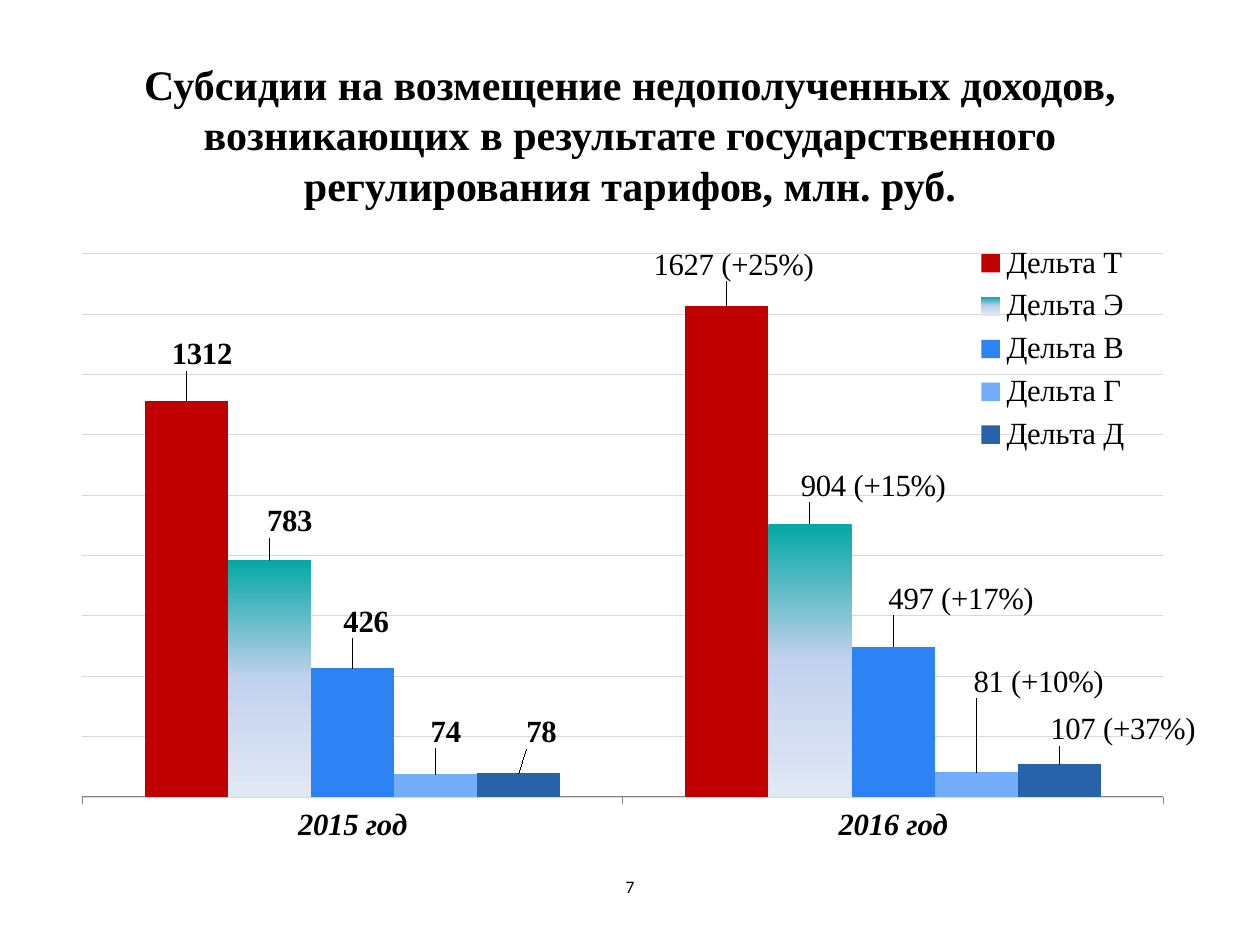
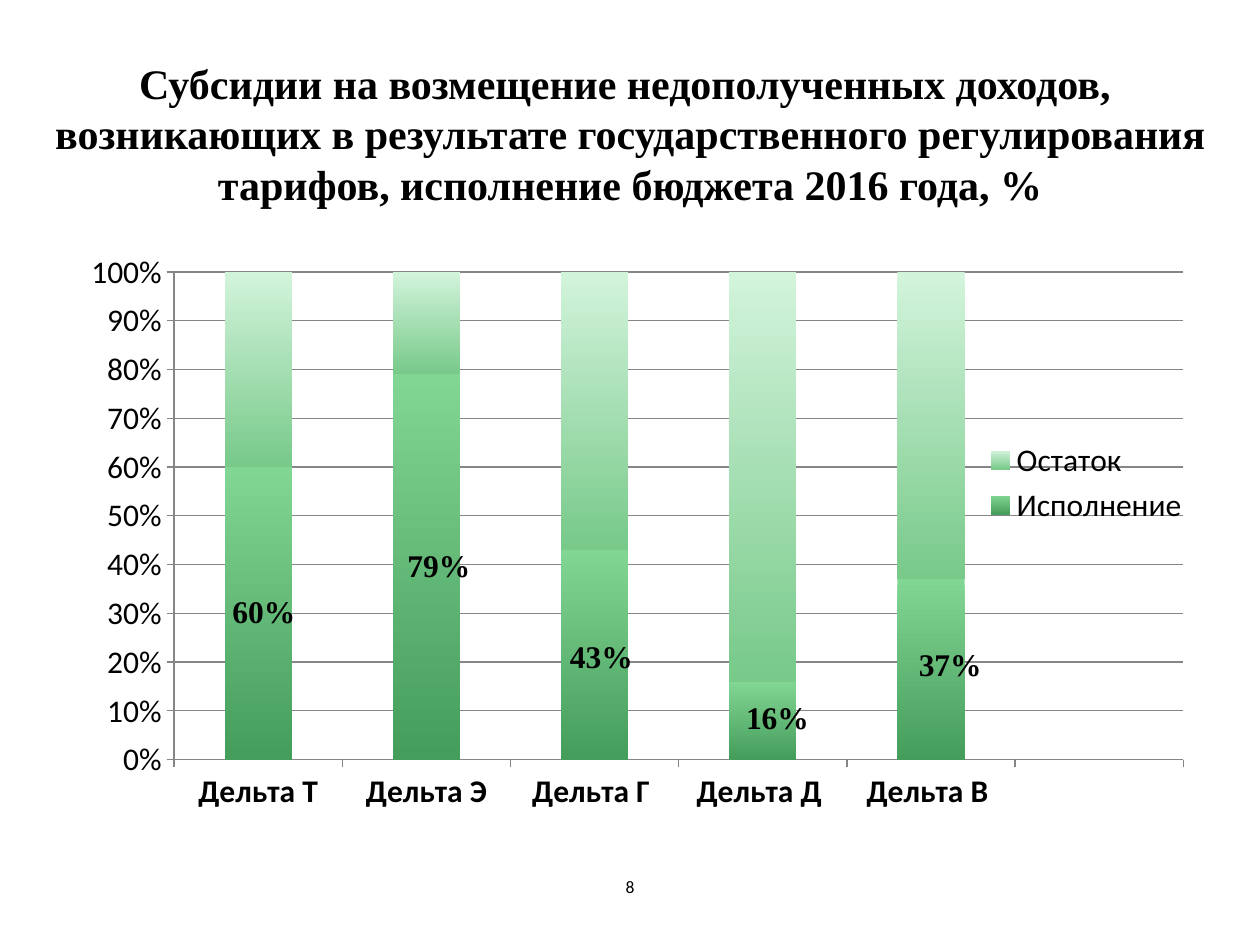
from dataclasses import dataclass

from lxml.etree import SubElement
from pptx import Presentation
from pptx.chart.data import CategoryChartData
from pptx.dml.color import RGBColor
from pptx.enum.chart import XL_CHART_TYPE as ChartType
from pptx.enum.chart import XL_LABEL_POSITION as LabelPos
from pptx.enum.chart import XL_LEGEND_POSITION as LegendPos
from pptx.enum.chart import XL_TICK_MARK as Tick
from pptx.enum.text import MSO_ANCHOR as Anchor
from pptx.enum.text import PP_ALIGN as Align
from pptx.oxml import parse_xml
from pptx.oxml.ns import nsdecls, qn
from pptx.util import Pt

BLACK = RGBColor(0x00, 0x00, 0x00)
GRID = RGBColor(0xD9, 0xD9, 0xD9)
AXIS = RGBColor(0x86, 0x86, 0x86)
RED = RGBColor(0xC0, 0x00, 0x00)
TEAL = RGBColor(0x04, 0xA8, 0xA4)
PALE_BLUE = RGBColor(0xC2, 0xD1, 0xED)
ICE = RGBColor(0xE1, 0xE8, 0xF5)
BLUE = RGBColor(0x2D, 0x83, 0xF4)
LIGHT_BLUE = RGBColor(0x73, 0xAC, 0xF8)
DARK_BLUE = RGBColor(0x28, 0x62, 0xAA)
GREEN = RGBColor(0x82, 0xD6, 0x94)
DARK_GREEN = RGBColor(0x45, 0x9D, 0x5B)
PALE_GREEN = RGBColor(0xD2, 0xF4, 0xDB)
MID_GREEN = RGBColor(0x78, 0xC9, 0x8A)

SERIF = "Times New Roman"
SANS = "Calibri"


@dataclass(frozen=True)
class Box:
    x: float
    y: float
    w: float
    h: float

    def lengths(self) -> tuple:
        return Pt(self.x), Pt(self.y), Pt(self.w), Pt(self.h)


@dataclass(frozen=True)
class Label:
    dx: float
    dy: float
    text: str = ""


@dataclass(frozen=True)
class Series:
    name: str
    values: tuple
    colors: tuple
    labels: tuple = ()


@dataclass(frozen=True)
class ChartSpec:
    kind: ChartType
    box: Box
    plot: Box
    legend: Box
    legend_font: str
    categories: tuple
    series: tuple
    number_format: str
    label_pos: LabelPos
    axis_max: float
    axis_step: float
    axis_font: str
    font_size: float
    italic: bool
    show_values: bool
    grid: RGBColor
    grid_width: float


@dataclass(frozen=True)
class Page:
    number: int
    title: str
    title_box: Box
    chart: ChartSpec


NUMBER_BOX = Box(314.3, 492.2, 91.44, 28.8)

PAGES = (
    Page(
        7,
        "Субсидии на возмещение недополученных доходов, возникающих в результате "
        "государственного регулирования тарифов, млн. руб.",
        Box(36, 43, 648, 67),
        ChartSpec(
            ChartType.COLUMN_CLUSTERED, Box(36, 133.9, 648, 356.4),
            Box(0.017, 0.031, 0.956, 0.871), Box(0.8, 0.004, 0.15, 0.36), SERIF,
            ("2015 год", "2016 год"),
            (
                Series("Дельта Т", (1312, 1627), (RED,),
                       (Label(0.014, -0.04), Label(0.006, -0.031, "1627 (+25%)"))),
                Series("Дельта Э", (783, 904), (TEAL, PALE_BLUE, ICE),
                       (Label(0.018, -0.028), Label(0.056, -0.026, "904 (+15%)"))),
                Series("Дельта В", (426, 497), (BLUE,),
                       (Label(0.012, -0.039), Label(0.06, -0.042, "497 (+17%)"))),
                Series("Дельта Г", (74, 81), (LIGHT_BLUE,),
                       (Label(0.009, -0.033), Label(0.055, -0.11, "81 (+10%)"))),
                Series("Дельта Д", (78, 107), (DARK_BLUE,),
                       (Label(0.02, -0.031), Label(0.056, -0.021, "107 (+37%)"))),
            ),
            "0", LabelPos.OUTSIDE_END, 1800, 200, SERIF, 17.6, True, False, GRID, 0.25,
        ),
    ),
    Page(
        8,
        "Субсидии на возмещение недополученных доходов, \vвозникающих в результате "
        "государственного регулирования тарифов, исполнение бюджета 2016 года, %",
        Box(19.9, 26.64, 680.4, 98.64),
        ChartSpec(
            ChartType.COLUMN_STACKED_100, Box(36, 139.4, 648, 356.4),
            Box(0.098, 0.045, 0.89, 0.782), Box(0.819, 0.305, 0.18, 0.155), SANS,
            ("Дельта Т", "Дельта Э", "Дельта Г ", "Дельта Д ", "Дельта В ", ""),
            (
                Series("Исполнение", (0.6, 0.79, 0.43, 0.16, 0.37, None),
                       (GREEN, DARK_GREEN),
                       (Label(0.005, 0), Label(0.011, 0), Label(0.006, 0.005),
                        Label(0.013, -0.002), Label(0.017, -0.006))),
                Series("Остаток", (0.4, 0.21, 0.57, 0.84, 0.63, None),
                       (PALE_GREEN, MID_GREEN)),
            ),
            "0%", LabelPos.CENTER, 1, 0.1, SANS, 18, False, True, AXIS, 0.75,
        ),
    ),
)


def set_font(font, name: str, size: float, bold: bool = False, italic: bool = False) -> None:
    font.name = name
    font.size = Pt(size)
    font.bold = bold
    font.italic = italic
    font.color.rgb = BLACK


def add_text(slide, box: Box, text: str, font: str, size: float, bold: bool = False) -> None:
    tf = slide.shapes.add_textbox(*box.lengths()).text_frame
    tf.word_wrap = True
    tf.vertical_anchor = Anchor.MIDDLE
    p = tf.paragraphs[0]
    p.text = text
    p.alignment = Align.CENTER
    set_font(p.font, font, size, bold)


def set_layout(parent, index: int, **settings) -> None:
    for old in parent.findall(qn("c:layout")):
        parent.remove(old)
    layout = parse_xml(f"<c:layout {nsdecls('c')}><c:manualLayout/></c:layout>")
    for tag, value in settings.items():
        SubElement(layout[0], qn(f"c:{tag}")).set("val", str(value))
    parent.insert(index, layout)


def place(parent, index: int, box: Box, **target) -> None:
    set_layout(parent, index, **target, xMode="edge", yMode="edge",
               x=box.x, y=box.y, w=box.w, h=box.h)


def fill_series(s, colors: tuple) -> None:
    if len(colors) == 1:
        s.format.fill.solid()
        s.format.fill.fore_color.rgb = colors[0]
        return
    step = 100000 // (len(colors) - 1)
    stops = "".join(f'<a:gs pos="{i * step}"><a:srgbClr val="{color}"/></a:gs>'
                    for i, color in enumerate(colors))
    s._element.get_or_add_spPr().insert(0, parse_xml(
        f'<a:gradFill {nsdecls("a")} rotWithShape="1"><a:gsLst>{stops}</a:gsLst>'
        '<a:lin ang="5400000" scaled="0"/></a:gradFill>'))


def add_labels(s, labels: tuple, spec: ChartSpec) -> None:
    shared = s.data_labels
    shared.show_value = True
    shared.number_format = spec.number_format
    shared.number_format_is_linked = False
    shared.position = spec.label_pos
    set_font(shared.font, SERIF, spec.font_size, True)
    for i, label in enumerate(labels):
        data_label = s.points[i].data_label
        if label.text:
            r = data_label.text_frame.paragraphs[0].add_run()
            r.text = label.text
            set_font(r.font, SERIF, spec.font_size)
        else:
            set_font(data_label.font, SERIF, spec.font_size, True)
        data_label.position = spec.label_pos
        dLbl = shared._element.findall(qn("c:dLbl"))[i]
        set_layout(dLbl, 1, x=label.dx, y=label.dy)
    shared._element.append(parse_xml(
        f'<c:extLst {nsdecls("c")}><c:ext uri="{{CE6537A1-D6FC-4f65-9D91-7224C49458BB}}" '
        'xmlns:c15="http://schemas.microsoft.com/office/drawing/2012/chart">'
        '<c15:showLeaderLines val="0"/></c:ext></c:extLst>'))


def style_axes(chart, spec: ChartSpec) -> None:
    cat, val = chart.category_axis, chart.value_axis
    for axis in (cat, val):
        axis.major_tick_mark = Tick.OUTSIDE
        axis.minor_tick_mark = Tick.NONE
        axis.format.line.color.rgb = AXIS
        axis.format.line.width = Pt(0.75)
    set_font(cat.tick_labels.font, spec.axis_font, spec.font_size, True, spec.italic)
    set_font(val.tick_labels.font, SANS, spec.font_size)
    val.tick_labels.number_format = spec.number_format
    val.tick_labels.number_format_is_linked = False
    val.minimum_scale = 0
    val.maximum_scale = spec.axis_max
    val.major_unit = spec.axis_step
    val.visible = spec.show_values
    val.has_major_gridlines = True
    val.major_gridlines.format.line.color.rgb = spec.grid
    val.major_gridlines.format.line.width = Pt(spec.grid_width)


def add_chart(slide, spec: ChartSpec) -> None:
    data = CategoryChartData(number_format=spec.number_format)
    data.categories = spec.categories
    for series in spec.series:
        data.add_series(series.name, series.values)
    chart = slide.shapes.add_chart(spec.kind, *spec.box.lengths(), data).chart
    chart.has_title = False
    set_font(chart.font, SANS, spec.font_size)
    plot = chart.plots[0]
    plot.gap_width = 150
    plot.vary_by_categories = False
    style_axes(chart, spec)
    for s, series in zip(plot.series, spec.series):
        s.invert_if_negative = False
        fill_series(s, series.colors)
        if series.labels:
            add_labels(s, series.labels, spec)
    chart.has_legend = True
    legend = chart.legend
    legend.position = LegendPos.RIGHT
    legend.include_in_layout = True
    set_font(legend.font, spec.legend_font, spec.font_size)
    place(legend._element, 1, spec.legend)
    place(chart._chartSpace.chart.plotArea, 0, spec.plot, layoutTarget="inner")


def main() -> None:
    prs = Presentation()
    prs.slide_width, prs.slide_height = Pt(720), Pt(540)
    for page in PAGES:
        slide = prs.slides.add_slide(prs.slide_layouts[6])
        add_text(slide, page.title_box, page.title, SERIF, 24, True)
        add_chart(slide, page.chart)
        add_text(slide, NUMBER_BOX, str(page.number), SANS, 10)
    prs.save("out.pptx")


if __name__ == "__main__":
    main()
